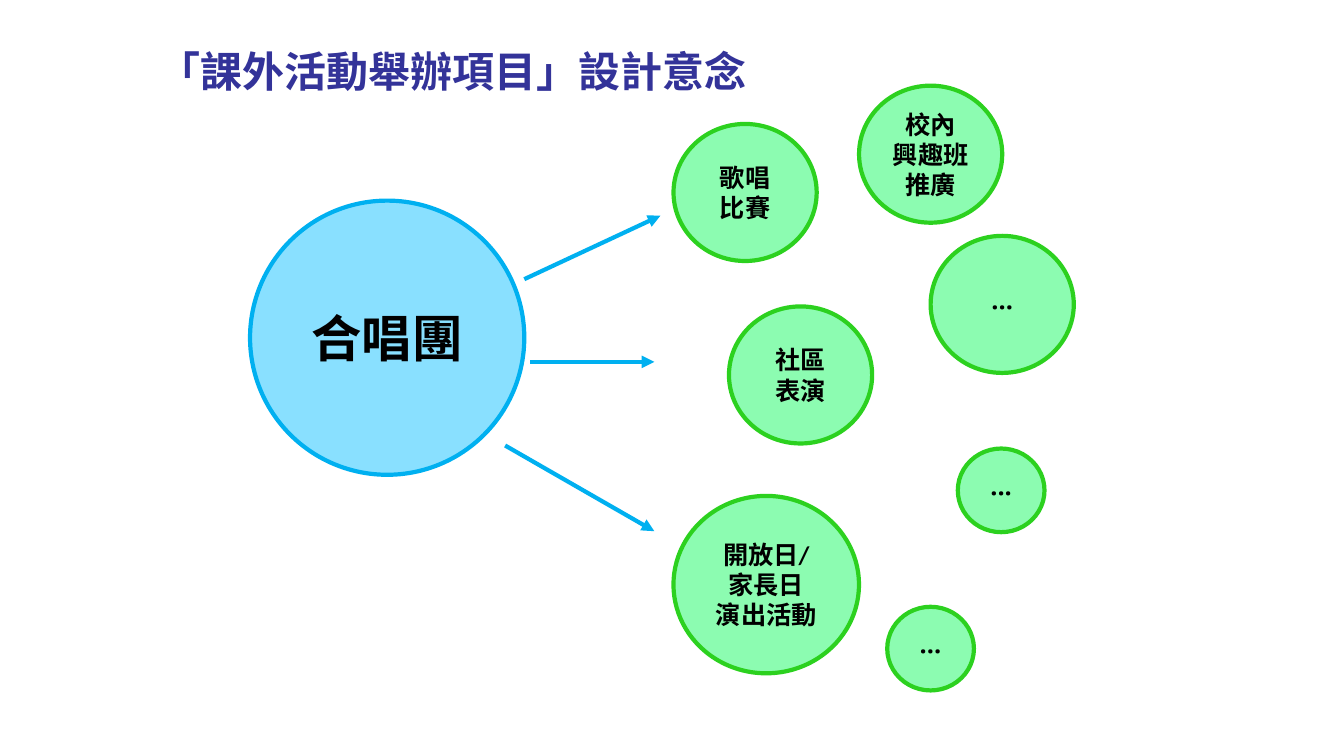
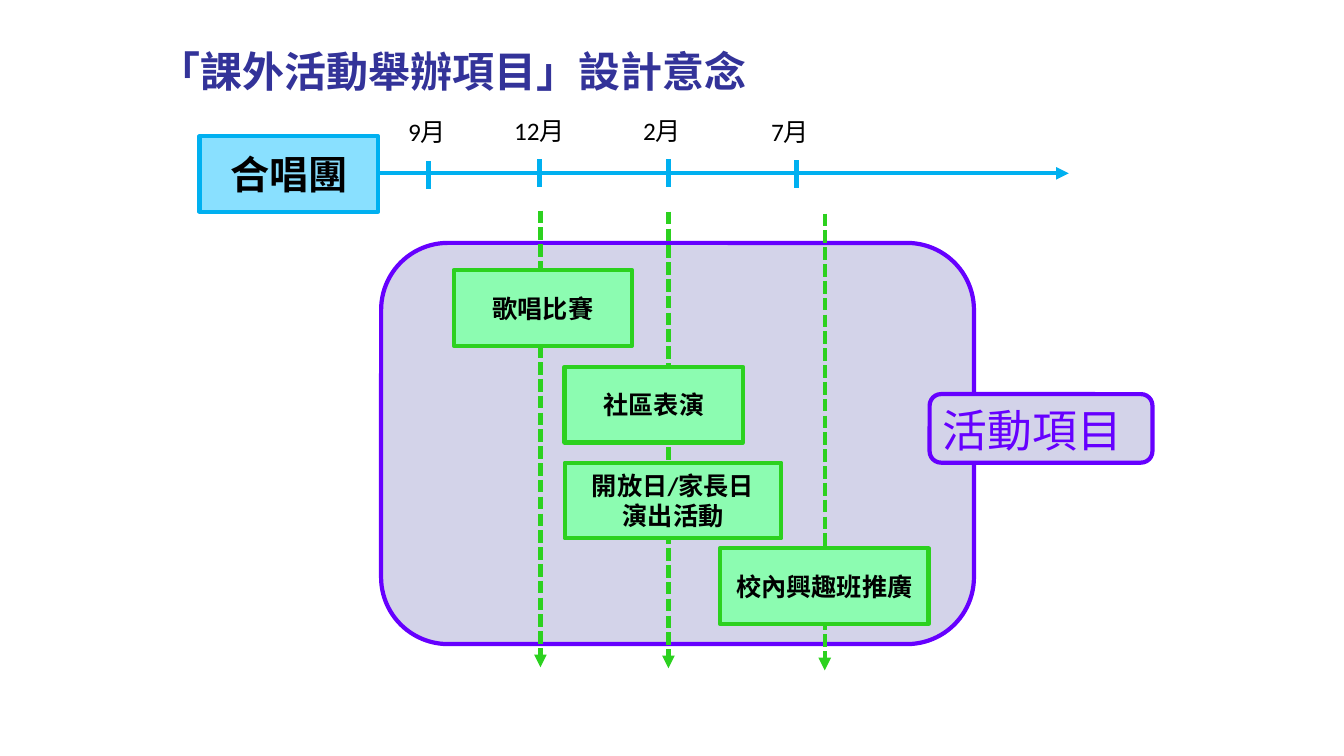
from lxml import etree
from pptx import Presentation
from pptx.dml.color import RGBColor
from pptx.enum import dml, shapes, text
from pptx.oxml import ns
from pptx.util import Inches, Pt

NAVY = RGBColor(0x33, 0x33, 0x99)
BLACK = RGBColor(0, 0, 0)
SKY = RGBColor(0x89, 0xE0, 0xFF)
BLUE = RGBColor(0x00, 0xB0, 0xF0)
MINT = RGBColor(0x8C, 0xFC, 0xB1)
GREEN = RGBColor(0x2C, 0xD1, 0x1F)
LILAC = RGBColor(0xD3, 0xD3, 0xE9)
PURPLE = RGBColor(0x66, 0x00, 0xFF)

TITLE = "「課外活動舉辦項目」設計意念"
FONT = "Calibri"
LINE_WIDTH = Pt(3)
OVAL = shapes.MSO_SHAPE.OVAL
RECT = shapes.MSO_SHAPE.RECTANGLE
ROUNDED = shapes.MSO_SHAPE.ROUNDED_RECTANGLE


def add_node(s, kind, box, lines=(), fill=MINT, outline=GREEN, size=18):
    """Add an outlined shape with one centred bold paragraph per line."""
    sp = s.shapes.add_shape(kind, *map(Inches, box))
    sp.shadow.inherit = False
    sp.fill.solid()
    sp.fill.fore_color.rgb = fill
    sp.line.color.rgb = outline
    sp.line.width = LINE_WIDTH
    tf = sp.text_frame
    tf.vertical_anchor = text.MSO_ANCHOR.MIDDLE
    for i, line in enumerate(lines):
        p = tf.add_paragraph() if i else tf.paragraphs[0]
        p.alignment = text.PP_ALIGN.CENTER
        r = p.add_run()
        r.text = line
        r.font.name, r.font.size, r.font.bold = FONT, Pt(size), True
        r.font.color.rgb = BLACK
    return sp


def add_line(s, x1, y1, x2, y2, color=BLUE, dashed=False, arrow=True):
    c = s.shapes.add_connector(
        shapes.MSO_CONNECTOR.STRAIGHT, *map(Inches, (x1, y1, x2, y2)))
    c.line.color.rgb = color
    c.line.width = LINE_WIDTH
    if dashed:
        c.line.dash_style = dml.MSO_LINE.SQUARE_DOT
    if arrow:
        ln = c._element.spPr.find(ns.qn("a:ln"))
        etree.SubElement(ln, ns.qn("a:tailEnd"), type="triangle")
    etree.SubElement(c._element.spPr, ns.qn("a:effectLst"))


prs = Presentation()
prs.slide_width, prs.slide_height = Inches(13.33), Inches(7.5)

# Both slides carry the same title
for _ in range(2):
    s = prs.slides.add_slide(prs.slide_layouts[5])
    sp = s.shapes.title
    sp.left, sp.top, sp.width, sp.height = map(Inches, (1.5, 0.16, 6.69, 0.83))
    tf = sp.text_frame
    tf.word_wrap = True
    tf.auto_size = text.MSO_AUTO_SIZE.NONE
    tf.vertical_anchor = text.MSO_ANCHOR.TOP
    tf.margin_left = tf.margin_right = Inches(0.07)
    tf.margin_top = tf.margin_bottom = Inches(0.04)
    p = tf.paragraphs[0]
    p.alignment = text.PP_ALIGN.LEFT
    p.line_spacing = 1.5
    r = p.add_run()
    r.text = TITLE
    r.font.name, r.font.size, r.font.bold = "Lato", Pt(30), True
    r.font.color.rgb = NAVY

idea, timeline = prs.slides

# Slide 1: the choir and the activities it can lead to
add_node(idea, OVAL, (2.48, 1.99, 2.72, 2.72), ["合唱團"], SKY, BLUE, 36)
for box, lines in [
    ((6.68, 1.23, 1.42, 1.36), ["歌唱", "比賽"]),
    ((7.23, 3.04, 1.42, 1.36), ["社區", "表演"]),
    ((6.68, 4.92, 1.84, 1.76), ["開放日/", "家長日", "演出活動"]),
    ((8.52, 0.85, 1.42, 1.36), ["校內", "興趣班", "推廣"]),
    ((9.23, 2.34, 1.42, 1.36), ["‧‧‧"]),
    ((8.8, 6.02, 0.86, 0.83), ["‧‧‧"]),
    ((9.5, 4.45, 0.86, 0.83), ["‧‧‧"]),
]:
    add_node(idea, OVAL, box, lines)
for ends in [(5.2, 2.77, 6.55, 2.14), (5.26, 3.59, 6.49, 3.59), (5.01, 4.42, 6.49, 5.27)]:
    add_line(idea, *ends)

# Slide 2: the activities along the school year
add_node(timeline, ROUNDED, (3.78, 2.41, 5.88, 3.98), fill=LILAC, outline=PURPLE)
for x, top in [(5.36, 2.09), (6.63, 2.1), (8.18, 2.12)]:
    add_line(timeline, x, top, x, top + 4.53, GREEN, dashed=True)

add_node(timeline, RECT, (1.98, 1.35, 1.77, 0.75), ["合唱團"], SKY, BLUE, 28)
add_line(timeline, 3.75, 1.72, 10.6, 1.72)
for month, x, label_left, label_top in [
    ("9月", 4.25, 3.95, 1.11),
    ("12月", 5.35, 5, 1.09),
    ("2月", 6.63, 6.28, 1.09),
    ("7月", 7.9, 7.55, 1.1),
]:
    add_line(timeline, x, label_top + 0.49, x, label_top + 0.77, arrow=False)
    label = timeline.shapes.add_textbox(
        *map(Inches, (label_left, label_top, 0.95, 0.4)))
    label.text_frame.word_wrap = True
    r = label.text_frame.paragraphs[0].add_run()
    r.text = month
    r.font.name, r.font.size = FONT, Pt(18)
    r.font.color.rgb = BLACK

for left, top, width, lines in [
    (4.5, 2.68, 1.77, ["歌唱比賽"]),
    (5.6, 3.64, 1.77, ["社區表演"]),
    (5.6, 4.59, 2.15, ["開放日/家長日", "演出活動"]),
    (7.14, 5.44, 2.07, ["校內興趣班推廣"]),
]:
    add_node(timeline, RECT, (left, top, width, 0.75), lines)

tag = add_node(timeline, ROUNDED, (9.22, 3.91, 2.21, 0.68), ["活動項目"], LILAC, PURPLE, 32)
tag.text_frame.vertical_anchor = text.MSO_ANCHOR.TOP
p = tag.text_frame.paragraphs[0]
p.alignment = text.PP_ALIGN.LEFT
p.runs[0].font.bold = False
p.runs[0].font.color.rgb = PURPLE

prs.save("out.pptx")
